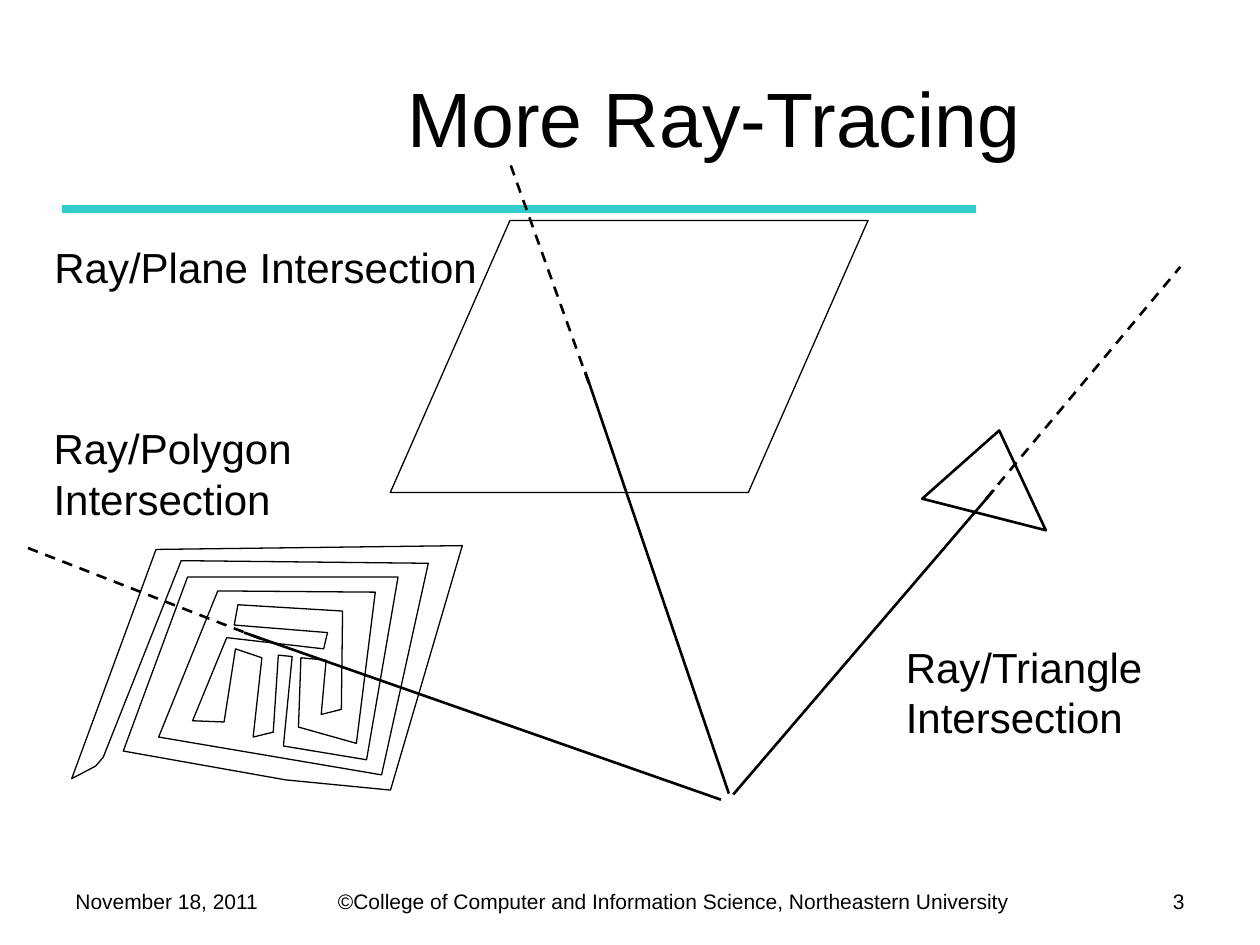
import pptx
import pptx.dml.color
import pptx.enum.dml
import pptx.enum.shapes
import pptx.enum.text
import pptx.oxml
import pptx.oxml.ns
import pptx.util

Pt = pptx.util.Pt
ALIGN = pptx.enum.text.PP_ALIGN
ANCHOR = pptx.enum.text.MSO_ANCHOR
BLACK = pptx.dml.color.RGBColor(0x00, 0x00, 0x00)
TEAL = pptx.dml.color.RGBColor(0x33, 0xCC, 0xCC)
FONT = "Arial"

TRIANGLE = [(153, 94), (109, 133), (179.6, 151), (153, 94)]
SPIRAL = [
    (13.7, 126), (18, 121), (62.6, 8.6), (203.8, 10.1), (177.1, 131),
    (49.7, 109.4), (83.5, 25.9), (173.5, 26.6), (162.7, 113),
    (129.6, 103.7), (131, 64.1), (145.4, 65.5), (142.6, 96.5),
    (154.1, 93.6), (154.8, 37.4), (95, 33.8), (92.9, 45.4),
    (146.2, 49.7), (144, 59), (88.6, 52.6), (69.1, 100.1),
    (87.1, 100.8), (93.6, 59), (108.7, 64.1), (103.7, 109.4),
    (115.2, 106.6), (118.1, 62.6), (126, 63.4), (121, 114.5),
    (168.5, 122.4), (186.5, 18), (66.2, 18), (29.5, 117.4),
    (122.4, 133.9), (182.2, 139.7), (223.2, 0), (48.2, 2.2), (0, 133.2),
]


def format_text(tf, text, size, align):
    tf.text = text
    tf.word_wrap = True
    p = tf.paragraphs[0]
    p.alignment = align
    r = p.runs[0]
    r.font.name = FONT
    r.font.size = Pt(size)
    r.font.color.rgb = BLACK


def add_text(slide, text, x, y, w, h, size, align=ALIGN.LEFT):
    s = slide.shapes.add_textbox(Pt(x), Pt(y), Pt(w), Pt(h))
    format_text(s.text_frame, text, size, align)


def add_line(slide, start, end, color=BLACK, width=1.5, dashed=False):
    s = slide.shapes.add_connector(
        pptx.enum.shapes.MSO_CONNECTOR.STRAIGHT,
        Pt(start[0]), Pt(start[1]), Pt(end[0]), Pt(end[1]))
    s.line.color.rgb = color
    s.line.width = Pt(width)
    if dashed:
        s.line.dash_style = pptx.enum.dml.MSO_LINE.DASH
    sp_pr = s._element.spPr
    sp_pr.append(pptx.oxml.parse_xml(
        "<a:effectLst %s/>" % pptx.oxml.ns.nsdecls("a")))


def outline(s, width):
    s.shadow.inherit = False
    s.fill.background()
    s.line.color.rgb = BLACK
    s.line.width = Pt(width)


def add_polygon(slide, x, y, points, width):
    corners = [(Pt(x + dx), Pt(y + dy)) for dx, dy in points]
    builder = slide.shapes.build_freeform(*corners[0], scale=1.0)
    builder.add_line_segments(corners[1:], close=True)
    outline(builder.convert_to_shape(), width)


def add_ray(slide, x, y, eye, hit, behind, far):
    eye, hit, behind, far = [(x + dx, y + dy)
                             for dx, dy in (eye, hit, behind, far)]
    add_line(slide, eye, hit)
    add_line(slide, behind, far, dashed=True)


def add_header(slide, x, y, w, h):
    s = slide.shapes.title
    s.left, s.top, s.width, s.height = Pt(x + 96.5), Pt(y), Pt(w - 96.5), Pt(h)
    format_text(s.text_frame, "More Ray-Tracing", 44, ALIGN.CENTER)
    s.text_frame.vertical_anchor = ANCHOR.MIDDLE
    add_line(slide, (x, y + 98), (x + 522, y + 98), TEAL, 4.5)


def add_plane(slide, x, y):
    add_text(slide, "Ray/Plane Intersection", x, y + 41, 277, 36, 24)
    s = slide.shapes.add_shape(
        pptx.enum.shapes.MSO_SHAPE.PARALLELOGRAM,
        Pt(x + 199), Pt(y + 32.5), Pt(273), Pt(155.5))
    s.adjustments[0] = 0.44
    outline(s, 0.75)
    add_ray(slide, x, y, (392.5, 360), (310.5, 119), (312.5, 125.5), (267.5, 0))


def add_triangle(slide, x, y):
    add_polygon(slide, x, y, TRIANGLE, 1.5)
    add_ray(slide, x, y, (1, 302), (150, 128), (145.5, 133), (256.5, 0.5))
    add_text(slide, "Ray/Triangle Intersection", x + 92.5, y + 211, 173.5, 65, 24)


def add_spiral(slide, x, y):
    add_polygon(slide, x + 28, y + 73.8, SPIRAL, 0.75)
    add_ray(slide, x, y, (399, 219), (126.5, 123.5), (136, 127), (0, 74))
    add_text(slide, "Ray/Polygon Intersection", x + 10.5, y, 173.5, 65, 24)


def add_footer(slide, x, y, w, h):
    add_text(slide, "November 18, 2011", x, y, 126, h, 12)
    add_text(slide, "©College of Computer and Information Science, "
             "Northeastern University", x + 150, y, 407.5, h, 12)
    add_text(slide, "3", x + w - 60, y, 60, h, 12, ALIGN.RIGHT)


def main():
    prs = pptx.Presentation()
    prs.slide_width, prs.slide_height = Pt(720), Pt(540)
    slide = prs.slides.add_slide(prs.slide_layouts[5])
    add_header(slide, 35.5, 21.5, 648.5, 90)
    add_plane(slide, 24, 93.5)
    add_triangle(slide, 418, 152)
    add_spiral(slide, 13, 238)
    add_footer(slide, 36, 504, 648, 24)
    prs.save("out.pptx")


if __name__ == "__main__":
    main()
